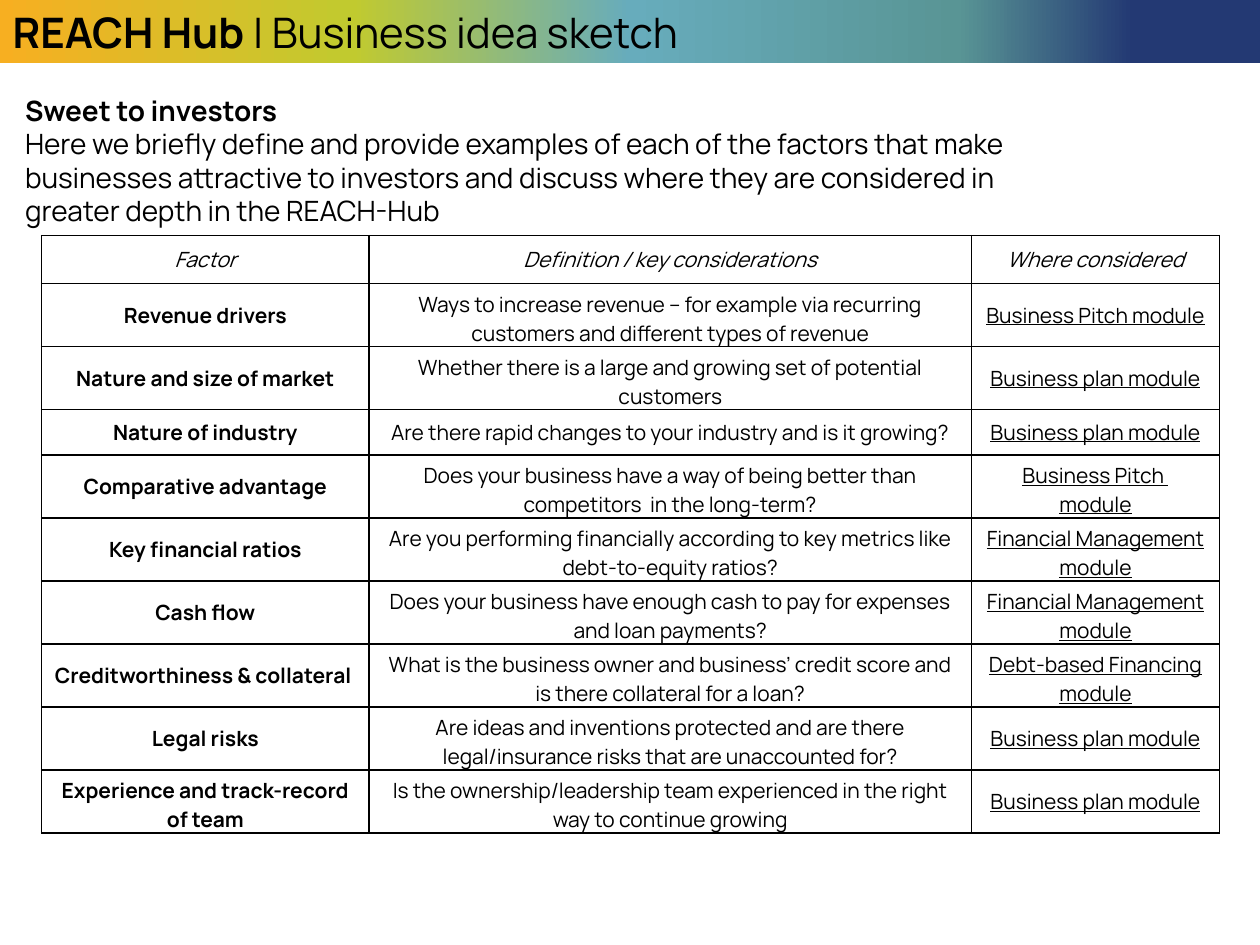
from lxml import etree
from pptx import Presentation
from pptx.dml.color import RGBColor
from pptx.enum.text import MSO_ANCHOR, MSO_AUTO_SIZE, PP_ALIGN
from pptx.oxml.ns import qn
from pptx.util import Inches, Pt

LEFT, CENTER = PP_ALIGN.LEFT, PP_ALIGN.CENTER
MIDDLE = MSO_ANCHOR.MIDDLE
NO_AUTOFIT = MSO_AUTO_SIZE.NONE

COLORS = {
    "ink": "000000",
    "orange": "F7AF21",
    "lime": "C1CA2F",
    "sky": "67ACBC",
    "teal": "599595",
    "navy": "233973",
}
BANNER_STOPS = [(0, "orange"), (28, "lime"), (50, "sky"), (76, "teal"), (90, "navy")]

COLUMN_WIDTHS = [2.6, 4.78, 1.97]
ROW_HEIGHTS = [0.38, 0.36, 0.39, 0.36, 0.36, 0.36, 0.36, 0.39, 0.36, 0.39]
HEADINGS = ("Factor", "Definition / key considerations", "Where considered")
PLAN = "Business plan module"
FINANCE = "Financial Management module"
FACTORS = [
    ("Revenue drivers",
     "Ways to increase revenue – for example via recurring customers and "
     "different types of revenue", "Business Pitch module"),
    ("Nature and size of market",
     "Whether there is a large and growing set of potential customers", PLAN),
    ("Nature of industry",
     "Are there rapid changes to your industry and is it growing?", PLAN),
    ("Comparative advantage",
     "Does your business have a way of being better than competitors  in the "
     "long-term?", "Business Pitch \nmodule"),
    ("Key financial ratios",
     "Are you performing financially according to key metrics like "
     "debt-to-equity ratios?", FINANCE),
    ("Cash flow",
     "Does your business have enough cash to pay for expenses and loan payments?",
     FINANCE),
    ("Creditworthiness & collateral ",
     "What is the business owner and business’ credit score and is there "
     "collateral for a loan?", "Debt-based Financing module"),
    ("Legal risks",
     "Are ideas and inventions protected and are there legal/insurance risks "
     "that are unaccounted for?", PLAN),
    ("Experience and track-record of team",
     "Is the ownership/leadership team experienced in the right way to "
     "continue growing", PLAN),
]
COLUMN_STYLES = [{"bold": True}, {}, {"underline": True}]


class SlideBuilder:
    def __init__(self, slide, font="Manrope"):
        self.slide = slide
        self.font = font

    def style(self, font, size, bold=False, italic=False, underline=False):
        font.name = self.font
        font.size = Pt(size)
        font.bold = bold
        font.italic = italic
        font.underline = underline
        font.color.rgb = RGBColor.from_string(COLORS["ink"])

    def banner(self, box, stops, bold_part, light_part):
        """Turn the title placeholder into a gradient strip."""
        title = self.slide.shapes.title
        title.left, title.top, title.width, title.height = map(Inches, box)
        title.fill.gradient()
        title.fill.gradient_angle = 0
        stop_list = title.fill._fill._gradFill.find(qn("a:gsLst"))
        for old_stop in list(stop_list):
            stop_list.remove(old_stop)
        for percent, color in stops:
            stop = etree.SubElement(stop_list, qn("a:gs"), pos=str(percent * 1000))
            etree.SubElement(stop, qn("a:srgbClr"), val=COLORS[color])
        frame = title.text_frame
        frame.auto_size = NO_AUTOFIT
        frame.vertical_anchor = MIDDLE
        paragraph = frame.paragraphs[0]
        paragraph.alignment = LEFT
        for text, bold in ((bold_part, True), (light_part, False)):
            run = paragraph.add_run()
            run.text = text
            self.style(run.font, 24, bold=bold)

    def intro(self, box, heading, body):
        frame = self.slide.shapes.add_textbox(*map(Inches, box)).text_frame
        frame.word_wrap = True
        frame.text = f"{heading}\n{body}"
        for paragraph, bold in zip(frame.paragraphs, (True, False)):
            self.style(paragraph.font, 16, bold=bold)

    def table(self, left, top, rows):
        table = self.slide.shapes.add_table(
            len(rows), len(COLUMN_WIDTHS), Inches(left), Inches(top),
            Inches(sum(COLUMN_WIDTHS)), Inches(sum(ROW_HEIGHTS))).table
        table.first_row = table.horz_banding = False
        for column, width in zip(table.columns, COLUMN_WIDTHS):
            column.width = Inches(width)
        for row, height in zip(table.rows, ROW_HEIGHTS):
            row.height = Inches(height)
        for r, texts in enumerate(rows):
            for c, text in enumerate(texts):
                emphasis = COLUMN_STYLES[c] if r else {"italic": True}
                self.cell(table.cell(r, c), text, emphasis)

    def cell(self, cell, text, emphasis):
        cell.text = text
        cell.vertical_anchor = MIDDLE
        cell.margin_left = cell.margin_right = Inches(0.1)
        cell.margin_top = cell.margin_bottom = Inches(0.05)
        for paragraph in cell.text_frame.paragraphs:
            paragraph.alignment = CENTER
            self.style(paragraph.font, 12, **emphasis)
        cell.fill.background()
        self.borders(cell)

    def borders(self, cell):
        properties = cell._tc.get_or_add_tcPr()
        for index, side in enumerate(("lnL", "lnR", "lnT", "lnB")):
            line = etree.Element(qn(f"a:{side}"), w=str(Pt(1)))
            fill = etree.SubElement(line, qn("a:solidFill"))
            etree.SubElement(fill, qn("a:srgbClr"), val=COLORS["ink"])
            properties.insert(index, line)


def main():
    deck = Presentation()
    deck.slide_width, deck.slide_height = Inches(10), Inches(7.5)
    builder = SlideBuilder(deck.slides.add_slide(deck.slide_layouts[5]))
    builder.banner((0, 0, 10, 0.5), BANNER_STOPS, "REACH Hub ", "| Business idea sketch")
    builder.intro(
        (0.1, 0.69, 8.45, 1.18), "Sweet to investors",
        "Here we briefly define and provide examples of each of the factors that "
        "make businesses attractive to investors and discuss where they are "
        "considered in greater depth in the REACH-Hub")
    builder.table(0.33, 1.87, [HEADINGS] + FACTORS)
    deck.save("out.pptx")


if __name__ == "__main__":
    main()
